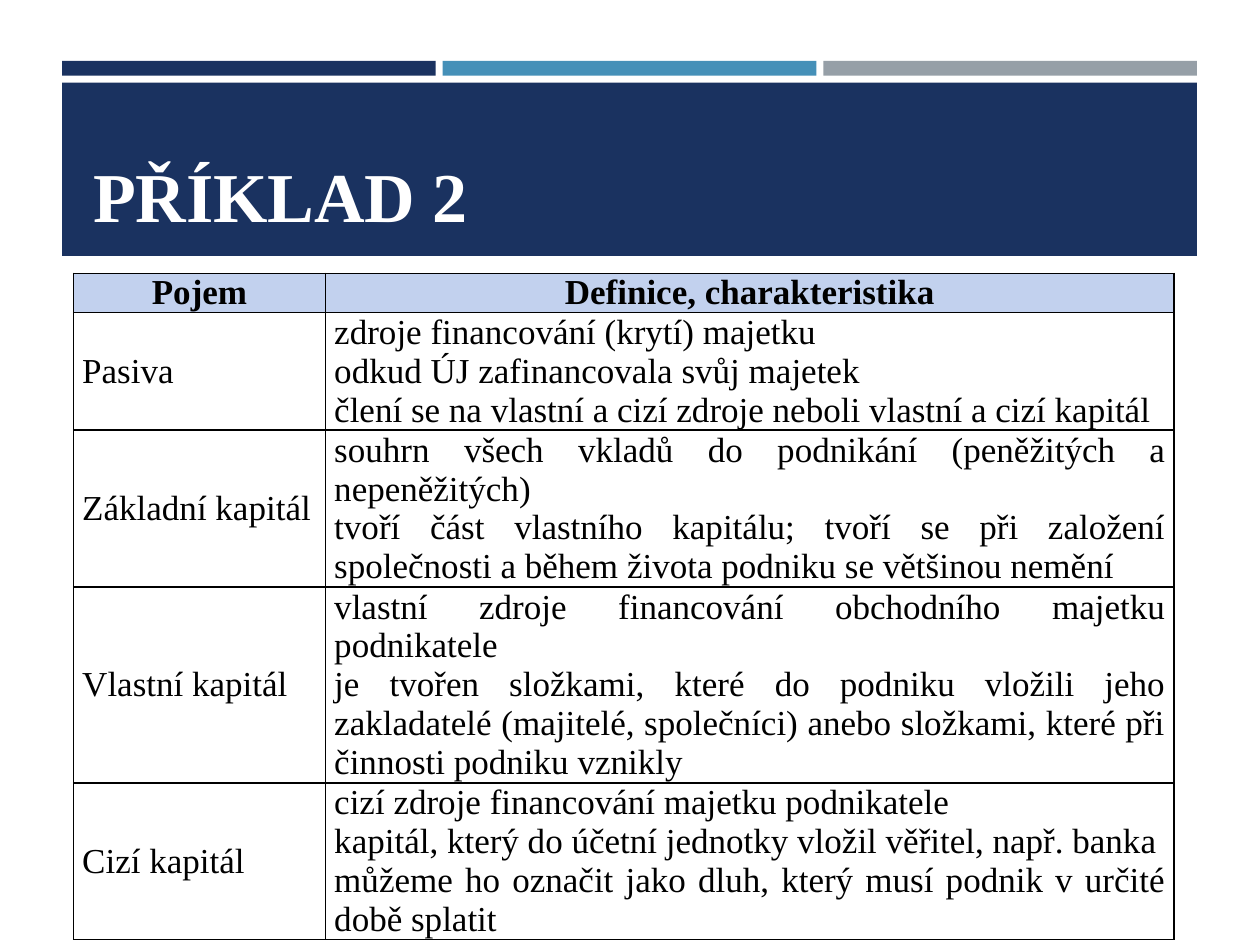
from lxml import etree
from pptx import Presentation
from pptx import util as u
from pptx.dml.color import RGBColor
from pptx.enum import shapes, text
from pptx.oxml.ns import qn

FONT = "Times New Roman"
NAVY, BLUE, GREY = "1A3260", "4590B8", "969FA7"
WHITE, BLACK, HEADER = "FFFFFF", "000000", "C2D1EE"
LINE_HEIGHT = 22.4
HEADINGS = ["Pojem", "Definice, charakteristika"]
TERMS = [
    ("Pasiva ", 3, [
        "zdroje financování (krytí) majetku ",
        "odkud ÚJ zafinancovala svůj majetek",
        "člení se na vlastní a cizí zdroje neboli vlastní a cizí kapitál"]),
    ("Základní kapitál", 4, [
        "souhrn všech vkladů do podnikání (peněžitých a nepeněžitých)",
        "tvoří část vlastního kapitálu; tvoří se při založení společnosti "
        "a během života podniku se většinou nemění"]),
    ("Vlastní kapitál", 5, [
        "vlastní zdroje financování obchodního majetku podnikatele",
        "je tvořen složkami, které do podniku vložili jeho zakladatelé "
        "(majitelé, společníci) anebo složkami, které při činnosti podniku vznikly"]),
    ("Cizí kapitál", 4, [
        "cizí zdroje financování majetku podnikatele",
        "kapitál, který do účetní jednotky vložil věřitel, např. banka",
        "můžeme ho označit jako dluh, který musí podnik v určité době splatit"]),
]


def colour(value):
    return RGBColor.from_string(value)


def write(para, words, size=20, bold=False, hue=BLACK,
          align=text.PP_ALIGN.JUSTIFY, gap=0):
    para.alignment = align
    para.space_before = para.space_after = u.Pt(gap)
    span = para.add_run()
    span.text = words
    span.font.name = FONT
    span.font.size = u.Pt(size)
    span.font.bold = bold
    span.font.color.rgb = colour(hue)


def add_bar(page, left, top, width, height, hue):
    bar = page.shapes.add_shape(shapes.MSO_SHAPE.RECTANGLE,
                                *map(u.Pt, (left, top, width, height)))
    bar.shadow.inherit = False
    bar.fill.solid()
    bar.fill.fore_color.rgb = colour(hue)
    bar.line.fill.background()


def add_title(page, words):
    box = page.shapes.title
    box.left, box.top, box.width, box.height = map(u.Pt, (46, 54, 629, 85))
    box.text_frame.vertical_anchor = text.MSO_ANCHOR.BOTTOM
    write(box.text_frame.paragraphs[0], words, size=40, bold=True,
          hue=WHITE, align=text.PP_ALIGN.LEFT)


def add_borders(cell):
    properties = cell._tc.get_or_add_tcPr()
    for side in ("a:lnL", "a:lnR", "a:lnT", "a:lnB"):
        line = etree.SubElement(properties, qn(side), w=str(u.Pt(1)))
        fill = etree.SubElement(line, qn("a:solidFill"))
        etree.SubElement(fill, qn("a:srgbClr"), val=BLACK)


def fill_cell(cell, lines, fill=None, **style):
    cell.vertical_anchor = text.MSO_ANCHOR.MIDDLE
    cell.margin_left = cell.margin_right = u.Pt(5)
    cell.margin_top = cell.margin_bottom = 0
    add_borders(cell)
    if fill:
        cell.fill.solid()
        cell.fill.fore_color.rgb = colour(fill)
    else:
        cell.fill.background()
    for index, words in enumerate(lines):
        frame = cell.text_frame
        para = frame.add_paragraph() if index else frame.paragraphs[0]
        write(para, words, **style)


def add_terms(page):
    counts = [1] + [count for _, count, _ in TERMS]
    table = page.shapes.add_table(
        len(counts), 2, u.Pt(42), u.Pt(156.25), u.Pt(629),
        u.Pt(LINE_HEIGHT * sum(counts))).table
    table.first_row = table.horz_banding = False
    for column, width in zip(table.columns, (144, 485)):
        column.width = u.Pt(width)
    for row, count in zip(table.rows, counts):
        row.height = u.Pt(LINE_HEIGHT * count)
    for column, words in enumerate(HEADINGS):
        fill_cell(table.cell(0, column), [words], fill=HEADER, bold=True,
                  align=text.PP_ALIGN.CENTER, gap=6)
    for row, (term, _, definition) in enumerate(TERMS, 1):
        fill_cell(table.cell(row, 0), [term], gap=6)
        fill_cell(table.cell(row, 1), definition)


def main():
    deck = Presentation()
    deck.slide_width, deck.slide_height = u.Pt(720), u.Pt(540)
    page = deck.slides.add_slide(deck.slide_layouts[5])
    for index, hue in enumerate((NAVY, BLUE, GREY)):
        add_bar(page, 35.5 + index * 217.5, 34.75, 213.5, 8.5, hue)
    add_bar(page, 35.5, 47.25, 648.5, 99, NAVY)
    add_title(page, "PŘÍKLAD 2")
    title = page.shapes.title._element
    title.getparent().append(title)
    add_terms(page)
    deck.save("out.pptx")


if __name__ == "__main__":
    main()
